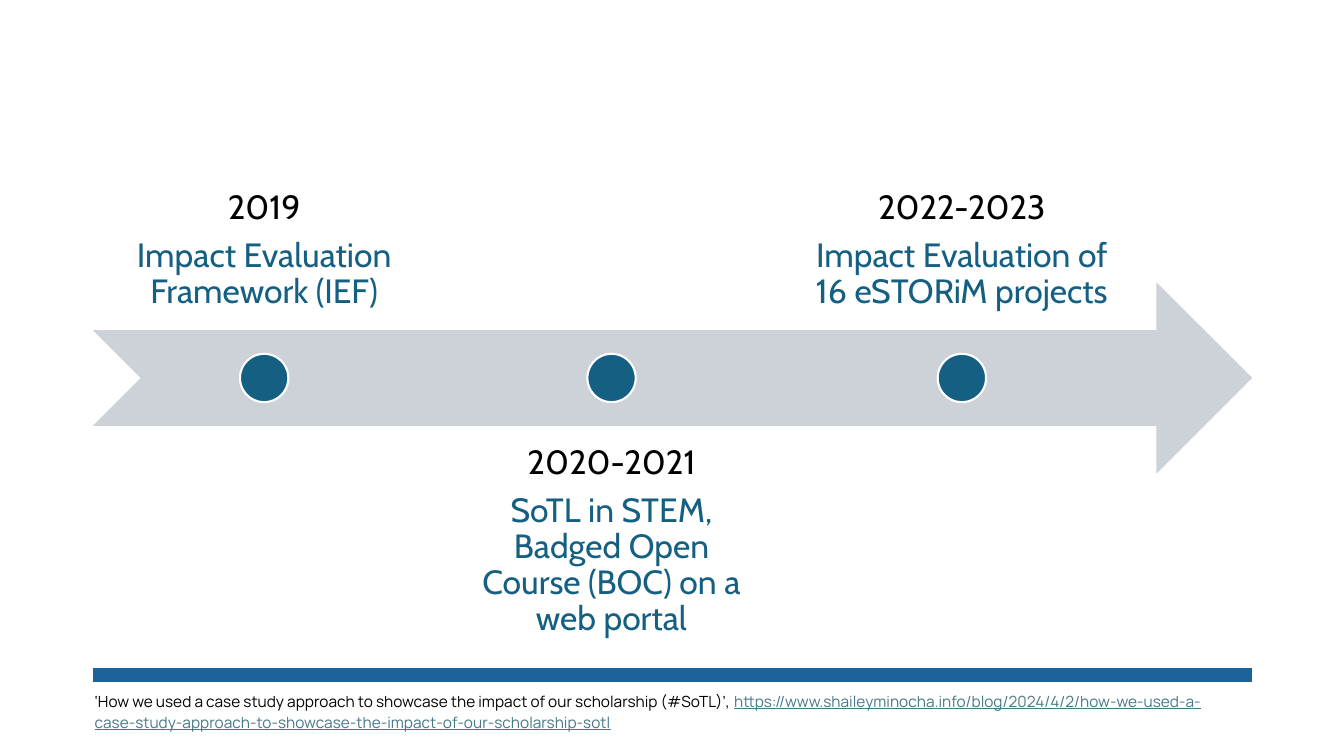
from lxml import etree
from pptx import Presentation
from pptx.dml.color import RGBColor
from pptx.enum.shapes import MSO_CONNECTOR, MSO_SHAPE
from pptx.enum.text import MSO_ANCHOR, PP_ALIGN
from pptx.oxml.ns import qn
from pptx.util import Inches, Pt

STRAIGHT = MSO_CONNECTOR.STRAIGHT
ARROW, OVAL = MSO_SHAPE.NOTCHED_RIGHT_ARROW, MSO_SHAPE.OVAL
TOP, BOTTOM = MSO_ANCHOR.TOP, MSO_ANCHOR.BOTTOM
CENTER = PP_ALIGN.CENTER

BLACK, WHITE, TEAL = "000000", "FFFFFF", "156082"
GREY, BLUE, LINK = "CCD2D8", "1D639B", "467886"
DOT = 0.48
PAD = 0.19

# Label left, label width, label above the arrow, date, event
EVENTS = [
    (0.92, 3.4, True, "2019", "Impact Evaluation Framework (IEF)"),
    (4.48, 3.17, False, "2020-2021",
     "SoTL in STEM, Badged Open Course (BOC) on a web portal"),
    (7.81, 3.46, True, "2022-2023",
     "Impact Evaluation of 16 eSTORiM projects"),
]
CITE = ("‘How we used a case study approach to showcase the impact "
        "of our scholarship (#SoTL)’, ")
URL = ("https://www.shaileyminocha.info/blog/2024/4/2/how-we-used-a-"
       "case-study-approach-to-showcase-the-impact-of-our-scholarship-sotl")


def color(code):
    return RGBColor.from_string(code)


def add_form(slide, kind, x, y, w, h, fill, edge=None):
    form = slide.shapes.add_shape(kind, Inches(x), Inches(y), Inches(w), Inches(h))
    form.shadow.inherit = False
    form.fill.solid()
    form.fill.fore_color.rgb = color(fill)
    if edge:
        form.line.color.rgb = color(edge)
        form.line.width = Pt(1.5)
    else:
        form.line.fill.background()


def add_frame(slide, x, y, w, h):
    box = slide.shapes.add_textbox(Inches(x), Inches(y), Inches(w), Inches(h))
    frame = box.text_frame
    frame.word_wrap = True
    return frame


def add_label(slide, x, y, w, h, anchor, date, event):
    frame = add_frame(slide, x, y, w, h)
    frame.vertical_anchor = anchor
    frame.margin_left = frame.margin_right = Inches(PAD)
    frame.margin_top = frame.margin_bottom = Inches(PAD)
    frame.text = f"{date}\n{event}"
    for para, tint in zip(frame.paragraphs, (BLACK, TEAL)):
        para.alignment = CENTER
        para.line_spacing = 0.9
        para.space_after = Pt(8.4)
        para.font.size = Pt(24)
        para.font.name = "Cabin"
        para.font.color.rgb = color(tint)


def add_timeline(slide, x, y, w, h):
    add_form(slide, ARROW, x, y, w, h, GREY)
    mid = y + h / 2
    half = h / 4  # half the height of the arrow's shaft
    for left, width, above, date, event in EVENTS:
        top = mid - half - h if above else mid + half
        add_label(slide, left, top, width, h, BOTTOM if above else TOP, date, event)
        add_form(slide, OVAL, left + (width - DOT) / 2, mid - DOT / 2,
                 DOT, DOT, TEAL, WHITE)


def add_footer(slide, x, y, w):
    # Rule
    rule = slide.shapes.add_connector(
        STRAIGHT, Inches(x), Inches(y), Inches(x + w), Inches(y))
    rule.line.color.rgb = color(BLUE)
    rule.line.width = Pt(10)
    etree.SubElement(rule._element.spPr, qn("a:effectLst"))

    # Source
    para = add_frame(slide, x - 0.08, y + 0.09, w, 0.52).paragraphs[0]
    para.line_spacing = Pt(15)
    para.space_before = Pt(3)
    para.space_after = Pt(6)
    para.font.size = Pt(11)
    para.font.name = "Manrope"
    for text, tint in ((CITE, BLACK), (URL, LINK)):
        run = para.add_run()
        run.text = text
        run.font.color.rgb = color(tint)
    run.font.underline = True


def main():
    deck = Presentation()
    deck.slide_width, deck.slide_height = Inches(13.33), Inches(7.5)
    slide = deck.slides.add_slide(deck.slide_layouts[6])
    add_footer(slide, 0.92, 6.7, 11.5)
    add_timeline(slide, 0.92, 2.8, 11.5, 1.9)
    deck.save("out.pptx")


if __name__ == "__main__":
    main()
